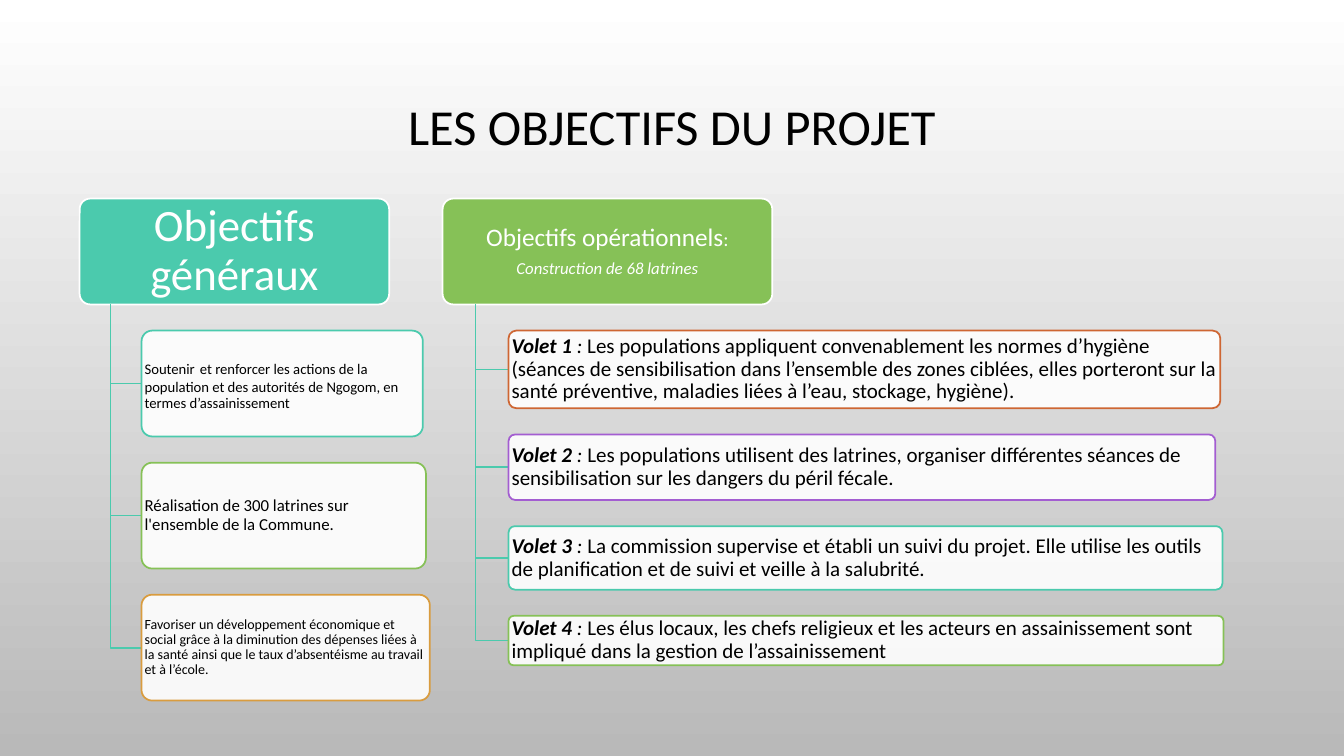
import pptx
import pptx.util
import pptx.dml.color
import pptx.enum.shapes
import pptx.enum.text
import pptx.oxml
import pptx.oxml.ns

INK = {
    "black": "000000", "white": "FFFFFF", "gray": "B9B9B9",
    "teal": "4BCAAD", "green": "86C157", "gold": "D99C3F",
    "rust": "CE6633", "violet": "A35DD1",
}
TOP, HEAD, GAP = 1.97, 1.05, 0.26
ROUND = 0.1
INCH = pptx.util.Inches

GOALS = [
    (2.79, 1.05, "teal", 10.5, [
        ("Soutenir", {}), (" ", {"size": 16}),
        ("et renforcer les actions de la population et des autorités de "
         "Ngogom, en termes d’assainissement", {})]),
    (2.82, 1.05, "green", 12, [
        ("Réalisation de 300 latrines sur l'ensemble de la Commune.", {})]),
    (2.86, 1.05, "gold", 10, [
        ("Favoriser un développement économique et social grâce à la "
         "diminution des dépenses liées à la santé ainsi que le taux "
         "d’absentéisme au travail et à l’école.", {})]),
]

PARTS = [
    (7.06, 0.77, "rust",
     "Les populations appliquent convenablement les normes d’hygiène "
     "(séances de sensibilisation dans l’ensemble des zones ciblées, elles "
     "porteront sur la santé préventive, maladies liées à l’eau, stockage, "
     "hygiène)."),
    (7.01, 0.65, "violet",
     "Les populations utilisent des latrines, organiser différentes séances "
     "de sensibilisation sur les dangers du péril fécale."),
    (7.08, 0.63, "teal",
     "La commission supervise et établi un suivi du projet. Elle utilise les "
     "outils de planification et de suivi et veille à la salubrité."),
    (7.09, 0.49, "green",
     "Les élus locaux, les chefs religieux et les acteurs en assainissement "
     "sont impliqué dans la gestion de l’assainissement"),
]


def rgb(name):
    return pptx.dml.color.RGBColor.from_string(INK[name])


def write(shape, paras, size=12, color="black", center=False,
          inset=(0, 0, 0, 0), after=0):
    """Fill a shape with paragraphs, each a list of (text, format) runs."""
    frame = shape.text_frame
    frame.word_wrap = True
    frame.vertical_anchor = pptx.enum.text.MSO_ANCHOR.MIDDLE
    (frame.margin_left, frame.margin_top,
     frame.margin_right, frame.margin_bottom) = map(INCH, inset)
    align = pptx.enum.text.PP_ALIGN
    for i, runs in enumerate(paras):
        para = frame.add_paragraph() if i else frame.paragraphs[0]
        para.alignment = align.CENTER if center else align.LEFT
        para.line_spacing = 0.9
        if i < len(paras) - 1:
            para.space_after = pptx.util.Pt(after)
        for text, style in runs:
            run = para.add_run()
            run.text = text
            font = run.font
            font.name = "Calibri"
            font.size = pptx.util.Pt(style.get("size", size))
            font.bold = style.get("bold", False)
            font.italic = style.get("italic", False)
            font.color.rgb = rgb(color)


def card(slide, x, y, w, h, fill, line, paras, pad=0.03, alpha=None, **style):
    """Rounded box with text; pad is measured from the outer edge."""
    kind = pptx.enum.shapes.MSO_SHAPE.ROUNDED_RECTANGLE
    box = slide.shapes.add_shape(kind, INCH(x), INCH(y), INCH(w), INCH(h))
    box.adjustments[0] = ROUND
    box.shadow.inherit = False
    box.fill.solid()
    box.fill.fore_color.rgb = rgb(fill)
    if alpha:
        tone = box.fill._xPr.find(".//" + pptx.oxml.ns.qn("a:srgbClr"))
        mark = pptx.oxml.parse_xml(
            f'<a:alpha {pptx.oxml.ns.nsdecls("a")} val="{alpha * 1000}"/>')
        tone.append(mark)
    box.line.color.rgb = rgb(line)
    box.line.width = pptx.util.Pt(1.25)
    # The preset already insets its text by the curve of the corner.
    pad = max(0, pad - 0.29 * ROUND * min(w, h))
    write(box, paras, inset=(pad, 0, pad, 0), **style)


def elbow(slide, x, y, end_x, end_y):
    pen = slide.shapes.build_freeform(INCH(x), INCH(y))
    pen.add_line_segments(
        [(INCH(x), INCH(end_y)), (INCH(end_x), INCH(end_y))], close=False)
    line = pen.convert_to_shape()
    line.shadow.inherit = False
    line.fill.background()
    line.line.color.rgb = rgb("teal")
    line.line.width = pptx.util.Pt(1.25)


def branch(slide, x, w, fill, head, items, **style):
    """Head box with its items hanging from a spine."""
    card(slide, x, TOP, w, HEAD, fill, "white", head,
         color="white", center=True, **style)
    foot = TOP + HEAD
    left = x + 0.2 * w
    y = foot + GAP
    for wide, high, line, size, runs in items:
        elbow(slide, x + 0.1 * w, foot, left, y + high / 2)
        card(slide, left, y, wide, high, "white", line, [runs],
             alpha=90, size=size)
        y += high + GAP


def part(num, row):
    wide, high, line, text = row
    runs = [(f"Volet {num} ", {"bold": True, "italic": True}),
            (": ", {"italic": True}), (text, {})]
    return wide, high, line, 15, runs


def backdrop(slide):
    fill = slide.background.fill
    fill.gradient()
    fill.gradient_angle = 270
    for stop, name, place in zip(fill.gradient_stops, ("white", "gray"), (0, 1)):
        stop.color.rgb = rgb(name)
        stop.position = place


def main():
    deck = pptx.Presentation()
    deck.slide_width, deck.slide_height = INCH(13.33), INCH(7.5)
    slide = deck.slides.add_slide(deck.slide_layouts[6])
    backdrop(slide)
    title = slide.shapes.add_textbox(
        INCH(1), INCH(0.68), INCH(11.33), INCH(1.75))
    write(title, [[("LES OBJECTIFS DU PROJET", {})]], size=36, center=True,
          inset=(0.1, 0.05, 0.1, 0.6))
    branch(slide, 0.79, 3.07, "teal", [[("Objectifs généraux", {})]],
           GOALS, size=32, pad=0.07)
    branch(slide, 4.39, 3.27, "green",
           [[("Objectifs opérationnels", {}), (":", {"size": 14})],
            [("Construction de 68 latrines", {"size": 12, "italic": True})]],
           [part(i, row) for i, row in enumerate(PARTS, 1)],
           size=18, pad=0.04, after=6)
    deck.save("out.pptx")


if __name__ == "__main__":
    main()
